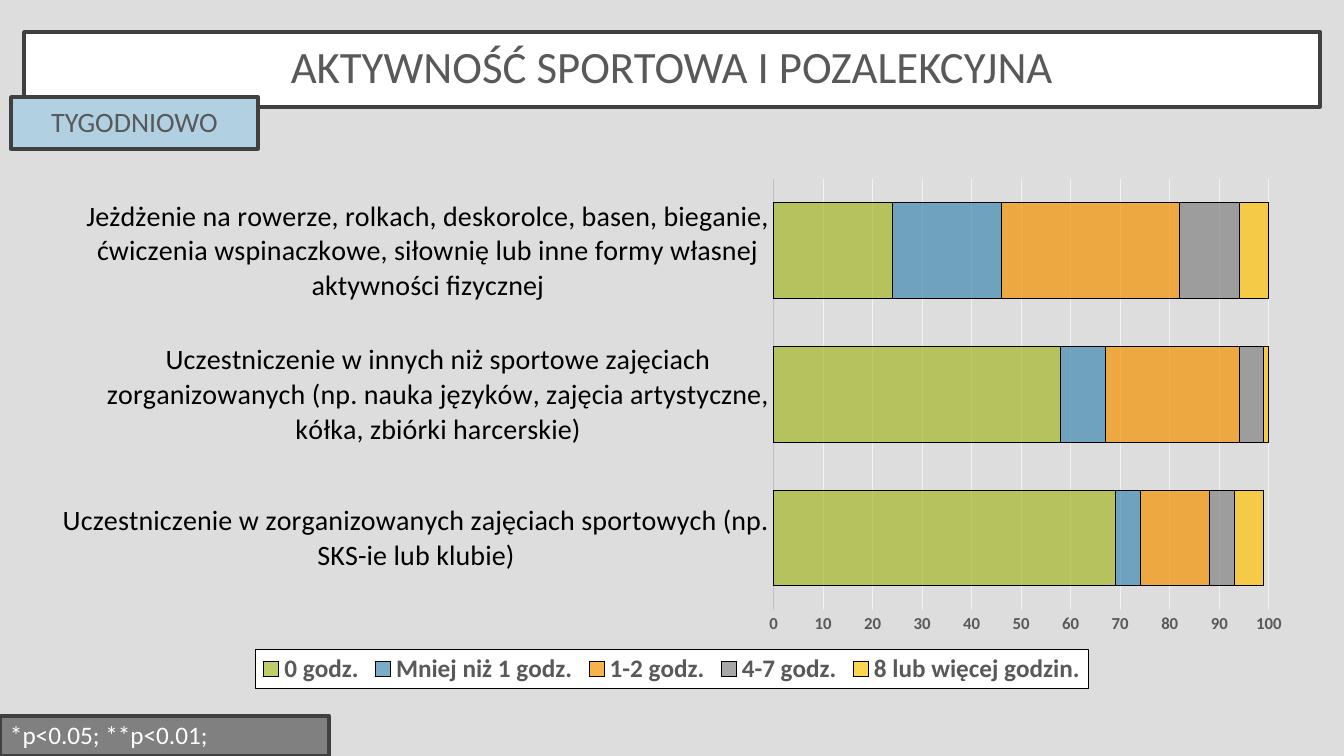
"""Build the slide on weekly sports and after-school activity."""
from pptx import Presentation
from pptx.chart.data import CategoryChartData
from pptx.dml.color import RGBColor
from pptx.enum.chart import XL_CHART_TYPE, XL_LEGEND_POSITION, XL_TICK_MARK
from pptx.enum.shapes import MSO_SHAPE
from pptx.enum.text import MSO_ANCHOR, PP_ALIGN
from pptx.oxml import parse_xml
from pptx.oxml.ns import nsdecls, qn
from pptx.oxml.xmlchemy import OxmlElement
from pptx.util import Pt

RECTANGLE = MSO_SHAPE.RECTANGLE
STACKED = XL_CHART_TYPE.BAR_STACKED
BOTTOM = XL_LEGEND_POSITION.BOTTOM
NO_TICK = XL_TICK_MARK.NONE
MIDDLE = MSO_ANCHOR.MIDDLE
CENTER, LEFT = PP_ALIGN.CENTER, PP_ALIGN.LEFT

FONT = "Calibri"
BLACK = RGBColor(0x00, 0x00, 0x00)
WHITE = RGBColor(0xFF, 0xFF, 0xFF)
BACKGROUND = RGBColor(0xDD, 0xDD, 0xDD)
FRAME = RGBColor(0x40, 0x40, 0x40)
GREY_TEXT = RGBColor(0x59, 0x59, 0x59)
PALE_BLUE = RGBColor(0xB1, 0xD1, 0xE3)
NOTE_GREY = RGBColor(0x80, 0x80, 0x80)
AXIS_GREY = RGBColor(0xBF, 0xBF, 0xBF)
GRID = RGBColor(0xF2, 0xF2, 0xF2)
GREEN = RGBColor(0xA6, 0xB7, 0x27)
BLUE = RGBColor(0x41, 0x8A, 0xB3)
ORANGE = RGBColor(0xF6, 0x92, 0x00)
GREY = RGBColor(0x83, 0x83, 0x83)
YELLOW = RGBColor(0xFE, 0xC3, 0x06)

PX = 914400 / 100.8
CHART_BOX = (37, 168, 1270, 523)
PLOT_BOX = (773, 179, 495, 431)
LEGEND_BOX = (255, 651, 833, 41)

ACTIVITIES = [
    "Uczestniczenie w zorganizowanych zajęciach sportowych (np. SKS-ie lub klubie)",
    "Uczestniczenie w innych niż sportowe zajęciach zorganizowanych "
    "(np. nauka języków, zajęcia artystyczne, kółka, zbiórki harcerskie)",
    "Jeżdżenie na rowerze, rolkach, deskorolce, basen, bieganie, ćwiczenia "
    "wspinaczkowe, siłownię lub inne formy własnej aktywności fizycznej",
]
HOURS = [
    ("0 godz.", (69, 58, 24), GREEN),
    ("Mniej niż 1 godz.", (5, 9, 22), BLUE),
    ("1-2 godz.", (14, 27, 36), ORANGE),
    ("4-7 godz.", (5, 5, 12), GREY),
    ("8 lub więcej godzin.", (6, 2, 7), YELLOW),
]


def add_banner(box, fill, text, size, color, align, inset):
    banner = slide.shapes.add_shape(RECTANGLE, *(round(v * PX) for v in box))
    banner.shadow.inherit = False
    banner.fill.solid()
    banner.fill.fore_color.rgb = fill
    banner.line.color.rgb = FRAME
    banner.line.width = Pt(2.5)
    frame = banner.text_frame
    frame.word_wrap = True
    frame.vertical_anchor = MIDDLE
    frame.margin_left = frame.margin_right = round(inset * PX)
    frame.margin_top = frame.margin_bottom = 0
    paragraph = frame.paragraphs[0]
    paragraph.alignment = align
    paragraph.line_spacing = 0.9
    run = paragraph.add_run()
    run.text = text
    run.font.name = FONT
    run.font.size = Pt(size)
    run.font.color.rgb = color


def chart_layout(box, target):
    left, top, width, height = CHART_BOX
    shares = (
        ("x", (box[0] - left) / width),
        ("y", (box[1] - top) / height),
        ("w", box[2] / width),
        ("h", box[3] / height),
    )
    modes = '<c:xMode val="edge"/><c:yMode val="edge"/>'
    places = "".join(f'<c:{key} val="{share:.3f}"/>' for key, share in shares)
    return parse_xml(
        f'<c:layout {nsdecls("c")}><c:manualLayout>{target}{modes}{places}'
        "</c:manualLayout></c:layout>"
    )


presentation = Presentation()
presentation.slide_width = round(1344 * PX)
presentation.slide_height = round(756 * PX)
slide = presentation.slides.add_slide(presentation.slide_layouts[6])
slide.background.fill.solid()
slide.background.fill.fore_color.rgb = BACKGROUND

add_banner((24, 32, 1296, 75), WHITE, "AKTYWNOŚĆ SPORTOWA I POZALEKCYJNA",
           32, GREY_TEXT, CENTER, 20)

activity_data = CategoryChartData()
activity_data.categories = ACTIVITIES
for name, values, color in HOURS:
    activity_data.add_series(name, values)
chart = slide.shapes.add_chart(
    STACKED, *(round(v * PX) for v in CHART_BOX), activity_data
).chart
chart.has_title = False
chart.font.name = FONT
chart.font.size = Pt(10)
chart.font.color.rgb = BLACK

bars = chart.plots[0]
bars.gap_width = 50
bars.overlap = 100
bars.vary_by_categories = False
for series, (name, values, color) in zip(bars.series, HOURS):
    series.format.fill.solid()
    series.format.fill.fore_color.rgb = color
    alpha = OxmlElement("a:alpha")
    alpha.set("val", "70000")
    series._element.xpath("c:spPr/a:solidFill/a:srgbClr")[0].append(alpha)
    series.format.line.color.rgb = BLACK
    series.format.line.width = Pt(0.75)

activity_axis = chart.category_axis
activity_axis.format.line.color.rgb = AXIS_GREY
activity_axis.format.line.width = Pt(0.75)
percent_axis = chart.value_axis
percent_axis.minimum_scale = 0
percent_axis.maximum_scale = 100
percent_axis.major_unit = 10
percent_axis.format.line.fill.background()
percent_axis.major_gridlines.format.line.color.rgb = GRID
percent_axis.major_gridlines.format.line.width = Pt(0.75)
for axis in (activity_axis, percent_axis):
    axis.major_tick_mark = axis.minor_tick_mark = NO_TICK

chart.has_legend = True
legend = chart.legend
legend.position = BOTTOM
legend.include_in_layout = False
for font, size, color, bold in (
    (activity_axis.tick_labels.font, 20, BLACK, False),
    (percent_axis.tick_labels.font, 12, GREY_TEXT, True),
    (legend.font, 18, GREY_TEXT, True),
):
    font.name = FONT
    font.size = Pt(size)
    font.color.rgb = color
    font.bold = bold

legend_xml = legend._element
for old_layout in legend_xml.findall(qn("c:layout")):
    legend_xml.remove(old_layout)
legend_xml.find(qn("c:legendPos")).addnext(chart_layout(LEGEND_BOX, ""))
legend_xml.find(qn("c:txPr")).addprevious(parse_xml(
    f'<c:spPr {nsdecls("c", "a")}><a:solidFill><a:srgbClr val="{WHITE}"/></a:solidFill>'
    f'<a:ln w="9525"><a:solidFill><a:srgbClr val="{BLACK}"/></a:solidFill></a:ln></c:spPr>'
))
plot_area = chart._chartSpace.chart.plotArea
for old_layout in plot_area.findall(qn("c:layout")):
    plot_area.remove(old_layout)
plot_area.insert(0, chart_layout(PLOT_BOX, '<c:layoutTarget val="inner"/>'))

add_banner((11, 97, 247, 52), PALE_BLUE, "TYGODNIOWO", 20, GREY_TEXT, CENTER, 20)
add_banner((0, 716, 329, 40), NOTE_GREY, "*p<0.05; **p<0.01;", 18, WHITE, LEFT, 10)

presentation.save("out.pptx")
